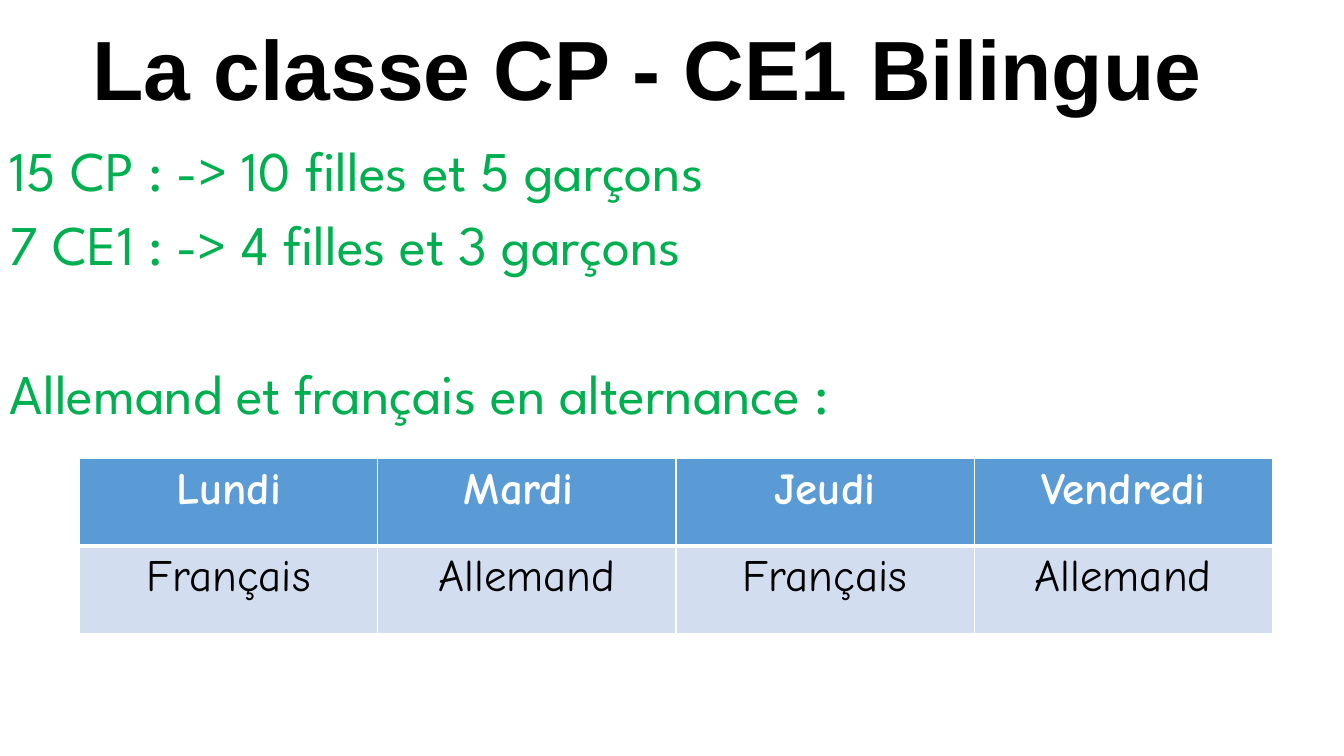
from lxml import etree
from pptx import Presentation
from pptx import util as u
from pptx.dml.color import RGBColor
from pptx.enum import text
from pptx.oxml.ns import qn

THEME = {
    "title": dict(font="Arial", size=60, color="000000", bold=True),
    "body": dict(font="League Spartan", size=40, color="00B050", bold=False),
    "header": dict(font="Comic Neue", size=32, color="FFFFFF", bold=True),
    "cell": dict(font="Comic Neue", size=32, color="000000", bold=False),
    "fills": {"header": "5B9BD5", "cell": "D2DEEF"},
    "border": "FFFFFF",
}


def add_run(p, words, style):
    r = p.add_run()
    r.text = words
    r.font.name = style["font"]
    r.font.size = u.Pt(style["size"])
    r.font.bold = style["bold"]
    r.font.color.rgb = RGBColor.from_string(style["color"])


def add_text_frame(slide, left, top, width, height, anchor):
    sp = slide.shapes.add_textbox(*map(u.Inches, (left, top, width, height)))
    tf = sp.text_frame
    tf.word_wrap = True
    tf.vertical_anchor = anchor
    return tf


prs = Presentation()
prs.slide_width, prs.slide_height = u.Inches(13.33), u.Inches(7.5)
slide = prs.slides.add_slide(prs.slide_layouts[6])

# Title
tf = add_text_frame(slide, 0.03, 0, 12.78, 1.45, text.MSO_ANCHOR.MIDDLE)
p = tf.paragraphs[0]
p.alignment = text.PP_ALIGN.CENTER
p.line_spacing = 0.9
add_run(p, "La classe CP - CE1 Bilingue", THEME["title"])

# Class facts, with a wider gap before the timetable heading
facts = [
    ("15 CP : -> 10 filles et 5 garçons", 10),
    ("7 CE1 : -> 4 filles et 3 garçons", 10),
    ("Allemand et français en alternance :", 63),
]
tf = add_text_frame(slide, 0, 1.37, 13.08, 5.07, text.MSO_ANCHOR.TOP)
for i, (words, gap) in enumerate(facts):
    p = tf.add_paragraph() if i else tf.paragraphs[0]
    p.line_spacing = 0.9
    p.space_before = u.Pt(gap)
    add_run(p, words, THEME["body"])

# Timetable
timetable = [
    ("header", ["Lundi", "Mardi ", "Jeudi", "Vendredi"]),
    ("cell", ["Français", "Allemand"] * 2),
]
table = slide.shapes.add_table(
    len(timetable), 4, u.Inches(0.79), u.Inches(4.55), u.Inches(11.83), u.Inches(1.74)
).table
for row, (kind, words) in enumerate(timetable):
    for col, word in enumerate(words):
        cell = table.cell(row, col)
        p = cell.text_frame.paragraphs[0]
        p.alignment = text.PP_ALIGN.CENTER
        add_run(p, word, THEME[kind])

        # Borders come before the fill; the rule between the rows is thicker
        tcPr = cell._tc.get_or_add_tcPr()
        for side in "LRTB":
            thick = (row, side) in [(0, "B"), (1, "T")]
            ln = etree.SubElement(tcPr, qn(f"a:ln{side}"), w=str(u.Pt(3 if thick else 1)))
            fill = etree.SubElement(ln, qn("a:solidFill"))
            etree.SubElement(fill, qn("a:srgbClr"), val=THEME["border"])
        cell.fill.solid()
        cell.fill.fore_color.rgb = RGBColor.from_string(THEME["fills"][kind])

prs.save("out.pptx")
